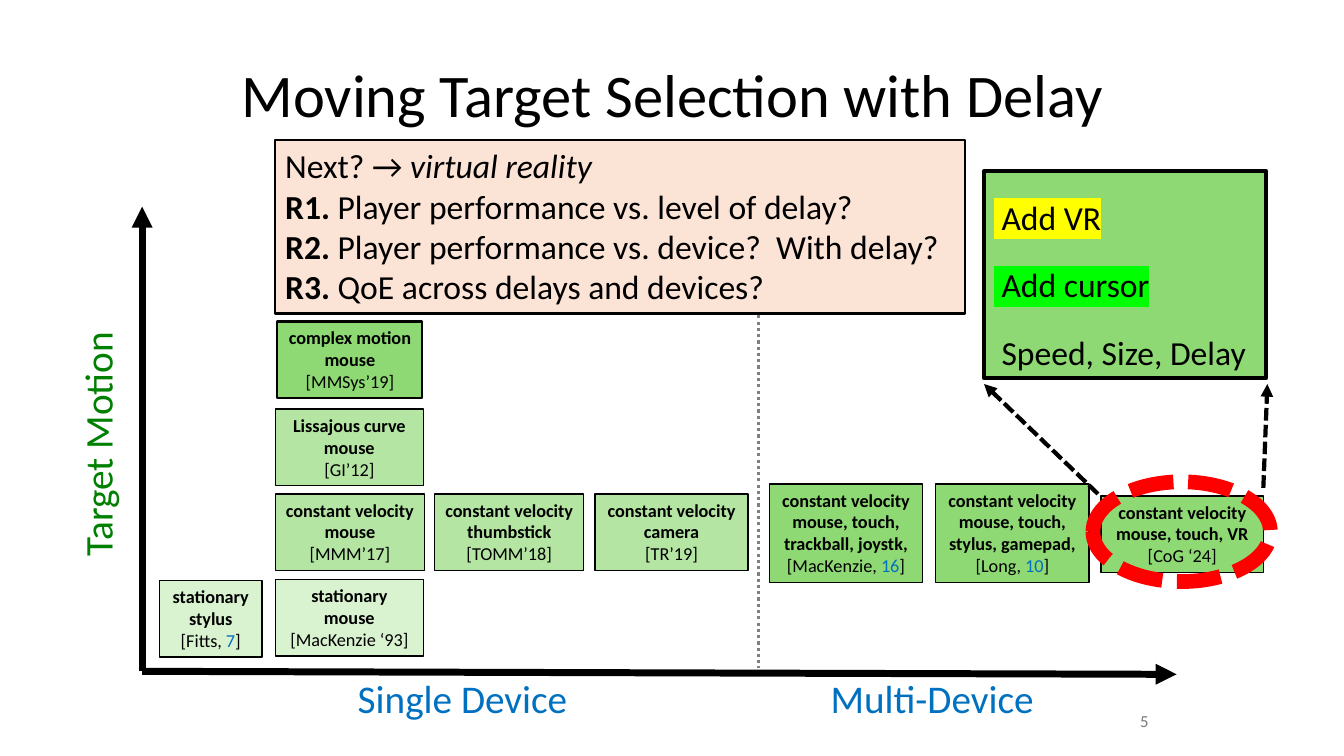
"""Builds a slide that maps moving target selection studies by motion and device."""
from lxml.etree import SubElement
from pptx import Presentation
from pptx.dml.color import RGBColor
from pptx.enum.dml import MSO_LINE as Dash
from pptx.enum.shapes import MSO_CONNECTOR as Connector, MSO_SHAPE as Shape
from pptx.enum.text import MSO_ANCHOR as Anchor, PP_ALIGN as Align
from pptx.oxml.ns import qn
from pptx.util import Inches, Pt

COLORS = {
    "black": "000000", "gray": "808080", "number": "797979",
    "blue": "0070C0", "motion": "008000", "red": "FF0000",
    "pale": "D9F2D0", "light": "B4E5A2", "green": "8ED973",
    "peach": "FBE3D6", "yellow": "FFFF00", "lime": "00FF00",
}


class SlideBuilder:
    font_name = "Calibri"

    def __init__(self, slide):
        self.shapes = slide.shapes

    def color(self, name):
        return RGBColor.from_string(COLORS[name])

    def fill_text(self, shape, paragraphs, size, color="black", align=Align.LEFT,
                  anchor=Anchor.TOP, wrap=True, gap=0):
        frame = shape.text_frame
        frame.word_wrap = wrap
        frame.vertical_anchor = anchor
        for index, spans in enumerate(paragraphs):
            para = frame.add_paragraph() if index else frame.paragraphs[0]
            para.alignment = align
            if index and gap:
                para.space_before = Pt(gap)
            for text, style in spans:
                self.add_span(para, text, size, style.get("color", color), style)

    def add_span(self, para, text, size, color, style):
        span = para.add_run()
        span.text = text
        font = span.font
        font.name, font.size = self.font_name, Pt(size)
        font.bold, font.italic = style.get("bold", False), style.get("italic", False)
        font.color.rgb = self.color(color)
        if "highlight" in style:
            properties = span._r.get_or_add_rPr()
            highlight = SubElement(properties, qn("a:highlight"))
            SubElement(highlight, qn("a:srgbClr"), val=COLORS[style["highlight"]])
            properties.find(qn("a:solidFill")).addnext(highlight)

    def label(self, text, left, top, width, height, size, color="black",
              rotation=0, **layout):
        box = self.shapes.add_textbox(*map(Inches, (left, top, width, height)))
        box.rotation = rotation
        self.fill_text(box, [[(text, {})]], size, color, **layout)

    def shape(self, kind, left, top, width, height, fill=None, line="black",
              weight=1.0, dash=None):
        shape = self.shapes.add_shape(kind, *map(Inches, (left, top, width, height)))
        shape.shadow.inherit = False
        if fill:
            shape.fill.solid()
            shape.fill.fore_color.rgb = self.color(fill)
        else:
            shape.fill.background()
        shape.line.color.rgb = self.color(line)
        shape.line.width = Pt(weight)
        if dash:
            shape.line.dash_style = dash
        return shape

    def panel(self, paragraphs, left, top, width, height, fill, weight,
              inset=0.05, gap=0):
        box = self.shape(Shape.RECTANGLE, left, top, width, height, fill, weight=weight)
        box.text_frame.margin_top = Inches(inset)
        self.fill_text(box, paragraphs, 24, gap=gap)

    def study(self, left, top, width, fill, titles, source, reference="",
              height=0.76, weight=1):
        box = self.shape(Shape.RECTANGLE, left, top, width, height, fill, weight=weight)
        citation = [("[" + source, {})]
        if reference:
            citation.append((reference, {"color": "blue"}))
        citation.append(("]", {}))
        paragraphs = [[(title, {"bold": True})] for title in titles]
        self.fill_text(box, paragraphs + [citation], 13, align=Align.CENTER)

    def line(self, start, end, weight, color="black", dash=None, arrow=True):
        line = self.shapes.add_connector(
            Connector.STRAIGHT, *map(Inches, (*start, *end)))
        line.line.color.rgb = self.color(color)
        line.line.width = Pt(weight)
        if dash:
            line.line.dash_style = dash
        properties = line._element.spPr
        if arrow:
            SubElement(properties.find(qn("a:ln")), qn("a:tailEnd"), type="triangle")
        SubElement(properties, qn("a:effectLst"))


def main():
    deck = Presentation()
    deck.slide_width, deck.slide_height = Inches(13.33), Inches(7.5)
    page = SlideBuilder(deck.slides.add_slide(deck.slide_layouts[6]))

    page.line((7.52, 2.32), (7.52, 6.63), 2.25, "gray", Dash.ROUND_DOT, arrow=False)
    page.label("Moving Target Selection with Delay", 2.17, 0.3, 9, 1.25, 43.2,
               align=Align.CENTER, anchor=Anchor.MIDDLE)
    page.label("5", 9.42, 6.95, 2.07, 0.4, 12, "number",
               align=Align.RIGHT, anchor=Anchor.MIDDLE)

    origin = (1.41, 6.66)
    page.line(origin, (11.67, 6.69), 5)
    page.line(origin, (1.41, 2.05), 5)
    page.label("Single Device", 3.45, 6.64, 2.3, 0.57, 28, "blue", wrap=False)
    page.label("Multi-Device", 8.14, 6.64, 2.24, 0.57, 28, "blue", wrap=False)
    page.label("Target Motion", -0.26, 4.11, 2.45, 0.57, 28, "motion",
               rotation=270, wrap=False)

    velocity = "constant velocity"
    page.study(1.58, 5.76, 1.02, "pale", ["stationary", "stylus"], "Fitts, ", "7")
    page.study(2.73, 5.75, 1.47, "pale", ["stationary", "mouse"], "MacKenzie ‘93")
    page.study(2.73, 4.9, 1.48, "light", [velocity + " mouse"], "MMM’17")
    page.study(4.31, 4.9, 1.48, "light", [velocity, "thumbstick"], "TOMM’18")
    page.study(5.9, 4.9, 1.52, "light", [velocity, "camera"], "TR’19")
    page.study(2.73, 4.06, 1.47, "light", ["Lissajous curve", "mouse"], "GI’12")
    page.study(2.75, 3.19, 1.44, "green", ["complex motion", "mouse"], "MMSys’19",
               weight=1.5)
    page.study(7.63, 4.8, 1.52, "green",
               [velocity, "mouse, touch, trackball, joystk,"],
               "MacKenzie, ", "16", height=0.98)
    page.study(9.28, 4.8, 1.52, "green",
               [velocity, "mouse, touch, stylus, gamepad,"],
               "Long, ", "10", height=0.98)
    page.study(10.92, 4.92, 1.61, "green", [velocity + " mouse, touch, VR"], "CoG ‘24")
    page.shape(Shape.OVAL, 10.84, 4.78, 1.76, 0.99, line="red", weight=10.5,
               dash=Dash.SQUARE_DOT)

    questions = ["Player performance vs. level of delay?",
                 "Player performance vs. device?  With delay?",
                 "QoE across delays and devices?"]
    agenda = [[("Next? → ", {}), ("virtual reality", {"italic": True})]]
    agenda += [[(f"R{number}. ", {"bold": True}), (question, {})]
               for number, question in enumerate(questions, 1)]
    page.panel(agenda, 2.73, 1.39, 6.84, 1.72, "peach", 1.5)

    additions = [[(" Add VR", {"highlight": "yellow"})],
                 [(" Add cursor", {"highlight": "lime"})],
                 [(" Speed, Size, Delay", {})]]
    page.panel(additions, 9.76, 1.7, 2.8, 2.05, "green", 3, inset=0.25, gap=19.5)
    page.line((12.53, 4.84), (12.57, 3.81), 3, dash=Dash.SQUARE_DOT)
    page.line((10.89, 4.9), (9.76, 3.81), 3, dash=Dash.SQUARE_DOT)

    deck.save("out.pptx")


if __name__ == "__main__":
    main()
